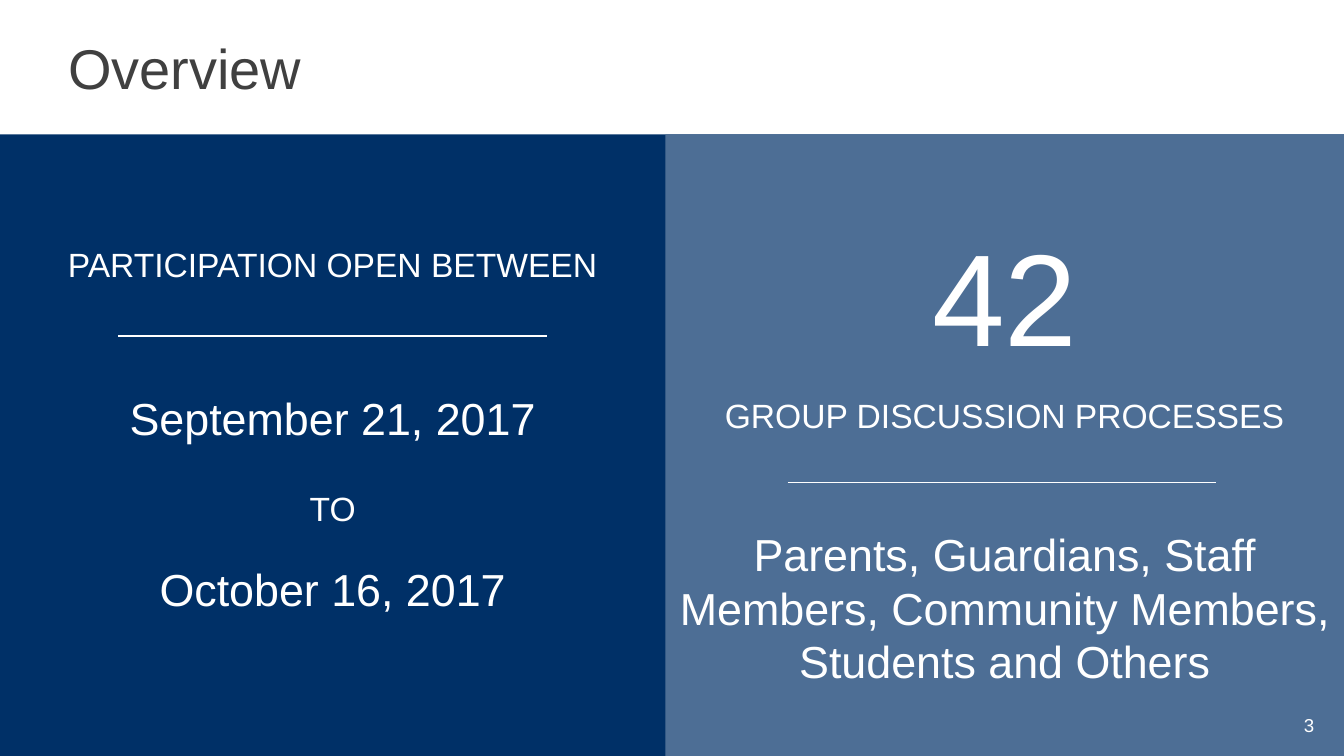
from pptx import Presentation
from pptx.dml.color import RGBColor
from pptx.enum.shapes import MSO_CONNECTOR, MSO_SHAPE
from pptx.enum.text import MSO_ANCHOR, MSO_AUTO_SIZE, PP_ALIGN
from pptx.util import Pt
from lxml.etree import SubElement
from pptx.oxml.ns import qn

NAVY = RGBColor(0x00, 0x30, 0x67)
STEEL = RGBColor(0x4D, 0x6E, 0x95)
WHITE = RGBColor(0xFF, 0xFF, 0xFF)
GRAY = RGBColor(0x40, 0x40, 0x40)
FONT = "Arial"

WIDTH, HEIGHT = 720, 405
HEADER_H = 72
LEFT_W = 356.4
RULE_W = 229.7


def style_text(tf, text, size, color, align, anchor):
    tf.word_wrap = True
    tf.auto_size = MSO_AUTO_SIZE.NONE
    tf.vertical_anchor = anchor
    tf.text = text
    p = tf.paragraphs[0]
    p.alignment = align
    font = p.runs[0].font
    font.name, font.size, font.color.rgb = FONT, Pt(size), color


def add_text(slide, x, y, w, h, text, size, anchor=MSO_ANCHOR.TOP):
    box = slide.shapes.add_textbox(Pt(x), Pt(y), Pt(w), Pt(h))
    style_text(box.text_frame, text, size, WHITE, PP_ALIGN.CENTER, anchor)


def add_block(slide, x, y, w, h, color):
    sp = slide.shapes.add_shape(MSO_SHAPE.RECTANGLE, Pt(x), Pt(y), Pt(w), Pt(h))
    sp.shadow.inherit = False
    sp.fill.solid()
    sp.fill.fore_color.rgb = color
    sp.line.fill.background()
    return sp


def add_rule(slide, x, y):
    line = slide.shapes.add_connector(
        MSO_CONNECTOR.STRAIGHT, Pt(x), Pt(y), Pt(x + RULE_W), Pt(y))
    line.line.color.rgb = WHITE
    line.line.width = Pt(1)
    SubElement(line._element.spPr, qn("a:effectLst"))


def add_header(slide, x, y, w, h):
    band = add_block(slide, x, y, w, h, WHITE)
    title = slide.shapes.title
    title._element.addprevious(band._element)  # band goes behind the title
    indent = 29.3
    title.left, title.top = Pt(x + indent), Pt(y)
    title.width, title.height = Pt(w - indent), Pt(h)
    style_text(title.text_frame, "Overview", 30, GRAY, PP_ALIGN.LEFT, MSO_ANCHOR.MIDDLE)


def add_dates(slide, x, y, w):
    add_text(slide, x, y + 55.4, w, 29, "PARTICIPATION OPEN BETWEEN", 18)
    add_rule(slide, x + (w - RULE_W) / 2, y + 108)
    add_text(slide, x, y + 134, w, 36, "September 21, 2017", 24, MSO_ANCHOR.MIDDLE)
    add_text(slide, x, y + 186, w, 29, "TO", 18)
    add_text(slide, x, y + 225.5, w, 36, "October 16, 2017", 24, MSO_ANCHOR.MIDDLE)


def add_processes(slide, x, y, w, h):
    add_block(slide, x, y, w, h, STEEL)
    add_text(slide, x, y + 40.3, w, 92, "42", 70)
    add_text(slide, x, y + 136.2, w, 29, "GROUP DISCUSSION PROCESSES", 18)
    add_rule(slide, x + 65.5, y + 186.5)
    add_text(slide, x, y + 206.6, w, 94,
             "Parents, Guardians, Staff Members, Community Members, "
             "Students and Others", 24)
    # Page number in the bottom right corner
    add_text(slide, x + w - 37.4, y + h - 26.3, 37.4, 19.4, "3", 10)


def main():
    prs = Presentation()
    prs.slide_width, prs.slide_height = Pt(WIDTH), Pt(HEIGHT)
    slide = prs.slides.add_slide(prs.slide_layouts[5])  # title only
    slide.background.fill.solid()
    slide.background.fill.fore_color.rgb = NAVY

    add_header(slide, 0, 0, WIDTH, HEADER_H)
    add_dates(slide, 0, HEADER_H, LEFT_W)
    add_processes(slide, LEFT_W, HEADER_H, WIDTH - LEFT_W, HEIGHT - HEADER_H)
    prs.save("out.pptx")


if __name__ == "__main__":
    main()
